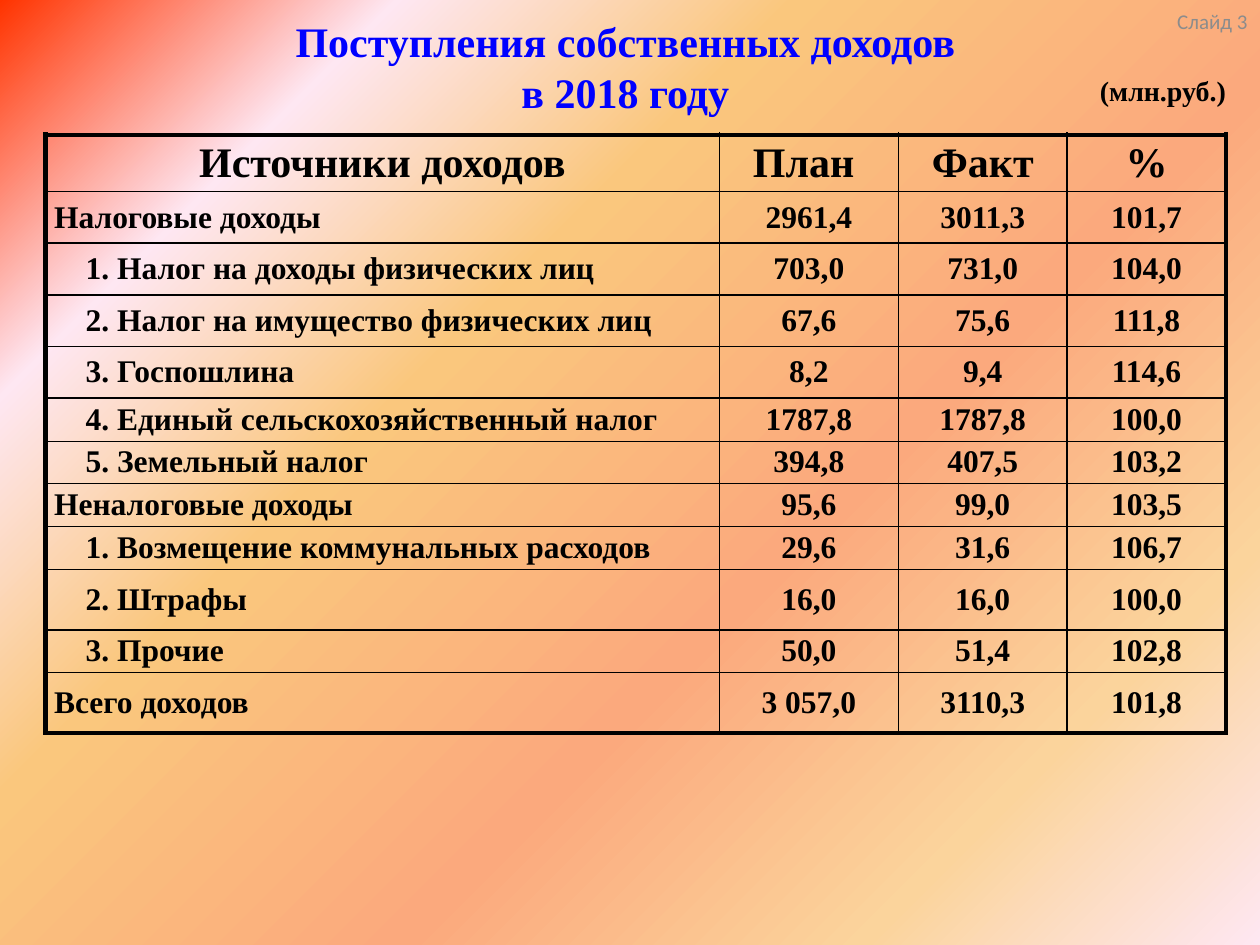
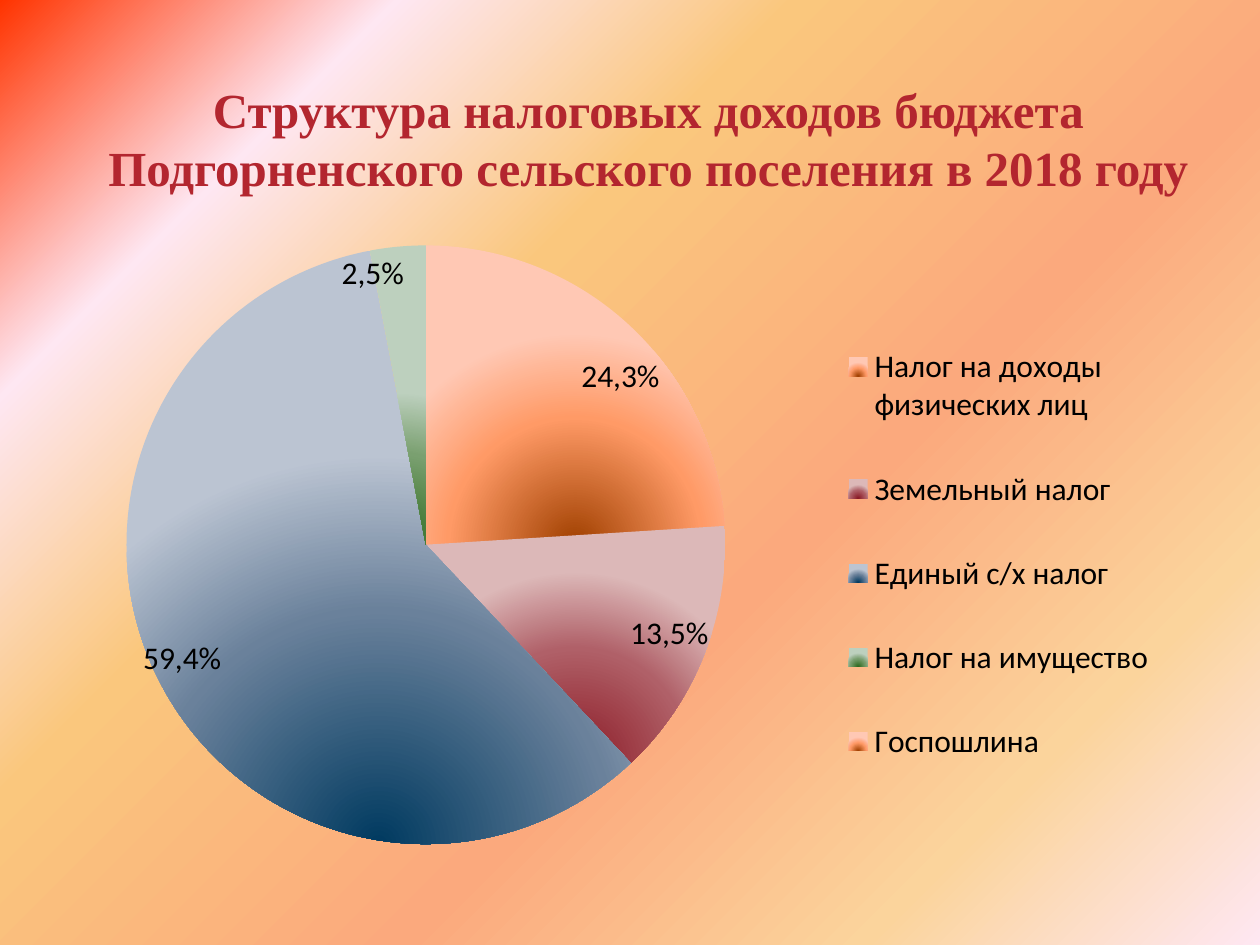
from lxml import etree
from pptx import Presentation
from pptx.chart.data import CategoryChartData
from pptx.dml.color import RGBColor
from pptx.enum.chart import XL_CHART_TYPE, XL_LABEL_POSITION, XL_LEGEND_POSITION
from pptx.enum.text import MSO_ANCHOR, PP_ALIGN
from pptx.oxml import parse_xml
from pptx.oxml.ns import nsdecls, qn
from pptx.util import Inches, Pt

LEFT, MID, RIGHT = PP_ALIGN.LEFT, PP_ALIGN.CENTER, PP_ALIGN.RIGHT
CENTER = MSO_ANCHOR.MIDDLE
PIE = XL_CHART_TYPE.PIE
INNER = XL_LABEL_POSITION.INSIDE_END
SIDE = XL_LEGEND_POSITION.RIGHT

BLACK = RGBColor(0, 0, 0)
BLUE = RGBColor(0, 0, 255)
RED = RGBColor(0xB3, 0x26, 0x2F)
GRAY = RGBColor(0x8C, 0x8C, 0x8C)
SERIF, SANS = "Times New Roman", "Calibri"
BACK = [(0, "FF3300"), (18, "FEE7F2"), (36, "FAC77D"),
        (61, "FBA97D"), (82, "FBD49C"), (100, "FEE7F2")]


def write(frame, text, size=18, color=BLACK, font=SERIF, bold=True, align=MID):
    """Fill a text frame; a newline in the text becomes a line break."""
    frame.word_wrap = True
    frame.vertical_anchor = CENTER
    para = frame.paragraphs[0]
    para.alignment = align
    for i, line in enumerate(text.split("\n")):
        if i:
            para.add_line_break()
        run = para.add_run()
        run.text = line
        run.font.size, run.font.name, run.font.bold = Pt(size), font, bold
        run.font.color.rgb = color


def blend(stops, way):
    """Return a gradient fill with (percent, colour) stops and a direction."""
    marks = "".join(f'<a:gs pos="{pos * 1000}"><a:srgbClr val="{tone}"/></a:gs>'
                    for pos, tone in stops)
    return parse_xml(f'<a:gradFill {nsdecls("a")} rotWithShape="1">'
                     f'<a:gsLst>{marks}</a:gsLst>{way}</a:gradFill>')


prs = Presentation()
prs.slide_width, prs.slide_height = Inches(10), Inches(7.5)
prs.slide_master.background.fill.gradient()
old = prs.slide_master.element.find(".//" + qn("p:bgPr")).find(qn("a:gradFill"))
old.getparent().replace(old, blend(BACK, '<a:lin ang="2700000" scaled="0"/>'))

# Title style shared by the slides
slides = []
for text, size, color, box in [
    ("Поступления собственных доходов \nв 2018 году ", 24, BLUE, (0.28, 0.13, 9.45, 0.79)),
    ("Структура налоговых доходов бюджета Подгорненского сельского поселения в 2018 году",
     28, RED, (0.7, 0.51, 8.89, 1.17)),
]:
    slide = prs.slides.add_slide(prs.slide_layouts[5])
    title = slide.shapes.title
    title.left, title.top, title.width, title.height = map(Inches, box)
    write(title.text_frame, text, size=size, color=color)
    slides.append(slide)
first, second = slides

# Slide 1: income table
unit = first.shapes.add_textbox(*map(Inches, (8.62, 0.52, 1.22, 0.39)))
write(unit.text_frame, "(млн.руб.)", size=16)
number = first.shapes.add_textbox(*map(Inches, (9.17, 0, 0.83, 0.33)))
write(number.text_frame, "Слайд 3", size=12, color=GRAY, font=SANS, bold=False, align=RIGHT)

ROWS = [
    (0.45, "Источники доходов", "План ", "Факт", "%"),
    (0.41, "Налоговые доходы", "2961,4", "3011,3", "101,7"),
    (0.41, "1. Налог на доходы физических лиц", "703,0", "731,0", "104,0"),
    (0.41, "2. Налог на имущество физических лиц", "67,6", "75,6", "111,8"),
    (0.41, "3. Госпошлина", "8,2", "9,4", "114,6"),
    (0.34, "4. Единый сельскохозяйственный налог", "1787,8", "1787,8", "100,0"),
    (0.34, "5. Земельный налог", "394,8", "407,5", "103,2"),
    (0.34, "Неналоговые доходы", "95,6", "99,0", "103,5"),
    (0.34, "1. Возмещение коммунальных расходов", "29,6", "31,6", "106,7"),
    (0.48, "2. Штрафы", "16,0", "16,0", "100,0"),
    (0.34, "3. Прочие", "50,0", "51,4", "102,8"),
    (0.48, "Всего доходов", "3 057,0", "3110,3", "101,8"),
]
COLS = [5.35, 1.42, 1.34, 1.26]
THIN = {5, 8}  # rows with a half-point line below
last, edge = len(ROWS) - 1, len(COLS) - 1

table = first.shapes.add_table(len(ROWS), len(COLS), Inches(0.36), Inches(1.07),
                               Inches(sum(COLS)), Inches(4.75)).table
table.first_row = table.horz_banding = False
for c, width in enumerate(COLS):
    table.columns[c].width = Inches(width)
for r, (height, *texts) in enumerate(ROWS):
    table.rows[r].height = Inches(height)
    for c, text in enumerate(texts):
        cell = table.cell(r, c)
        cell.fill.background()
        cell.vertical_anchor = CENTER
        cell.margin_left = Inches(0.32 if text[1:2] == "." else 0.07)
        cell.margin_right = Inches(0.07)
        cell.margin_top = cell.margin_bottom = 0
        write(cell.text_frame, text, size=18 if r else 24,
              align=LEFT if r and not c else MID)
        lines = {
            "L": 1 if c else 3,
            "R": 3 if c == edge else 1,
            "T": 3 if r == 0 else 0.5 if r - 1 in THIN else 1,
            "B": 3 if r == last else 0.5 if r in THIN else 1,
        }
        props = cell._tc.get_or_add_tcPr()
        for i, (side, weight) in enumerate(lines.items()):
            props.insert(i, parse_xml(
                f'<a:ln{side} {nsdecls("a")} w="{Pt(weight)}"><a:solidFill>'
                f'<a:srgbClr val="{BLACK}"/></a:solidFill></a:ln{side}>'))

# Slide 2: tax pie; name, value, label, label shift, tones from dark to light
WARM = ("A04000", "FF9A66", "FFC8B4")
PARTS = [
    ("Налог на доходы физических лиц", 24, "24,3%", (0.03, 0.04), WARM),
    ("Земельный налог", 14, "13,5%", (0.01, 0), ("8B1A25", "B06068", "DCB8B8")),
    ("Единый с/х налог", 59, "59,4%", (-0.02, 0), ("003A60", "6A819B", "BBC4D2")),
    ("Налог на имущество", 3, "2,5%", (-0.05, 0), ("2E6B20", "7AA070", "BDD0BE")),
    ("Госпошлина", 0, "0,3%", (0.02, 0), WARM),
]
GLOW = '<a:path path="circle"><a:fillToRect l="50000" t="100000" r="50000" b="0"/></a:path>'
EDGE = {"xMode": "edge", "yMode": "edge"}

data = CategoryChartData()
data.categories = [part[0] for part in PARTS]
data.add_series("Series 1", [part[1] for part in PARTS])
chart = second.shapes.add_chart(PIE, *map(Inches, (0.5, 1.75, 9, 4.95)), data).chart
chart.has_title = False
chart.font.size, chart.font.name = Pt(18), SANS
chart.font.color.rgb = BLACK
chart.has_legend = True
chart.legend.position = SIDE
chart.legend.include_layout = False
plot = chart.plots[0]
plot.vary_by_categories = True
plot.has_data_labels = True
plot.data_labels.show_percentage = True
plot.data_labels.show_value = False

area = chart._chartSpace.find(".//" + qn("c:plotArea"))
spots = [
    (area, 0, {"layoutTarget": "inner", **EDGE, "x": 0.04, "y": 0.04, "w": 0.56, "h": 0.96}),
    (chart.legend._element, 1, {**EDGE, "x": 0.68, "y": 0.13, "w": 0.29, "h": 0.81}),
]
series = plot.series[0]
for i, (name, value, text, (dx, dy), tones) in enumerate(PARTS):
    point = series.points[i]
    point.format.line.fill.background()
    point.format.fill.solid()
    look = series._element.findall(qn("c:dPt"))[i].find(qn("c:spPr"))
    look.replace(look.find(qn("a:solidFill")), blend(zip((0, 60, 100), tones), GLOW))
    label = point.data_label
    write(label.text_frame, text, font=SANS, bold=False)
    label.position = INNER
    mark = series._element.findall(".//" + qn("c:dLbl"))[i]
    spots.append((mark, 1, {"x": dx, "y": dy}))

for owner, index, values in spots:
    for old in owner.findall(qn("c:layout")):
        owner.remove(old)
    layout = etree.Element(qn("c:layout"))
    manual = etree.SubElement(layout, qn("c:manualLayout"))
    for key, value in values.items():
        etree.SubElement(manual, qn("c:" + key)).set("val", str(value))
    owner.insert(index, layout)

prs.save("out.pptx")
